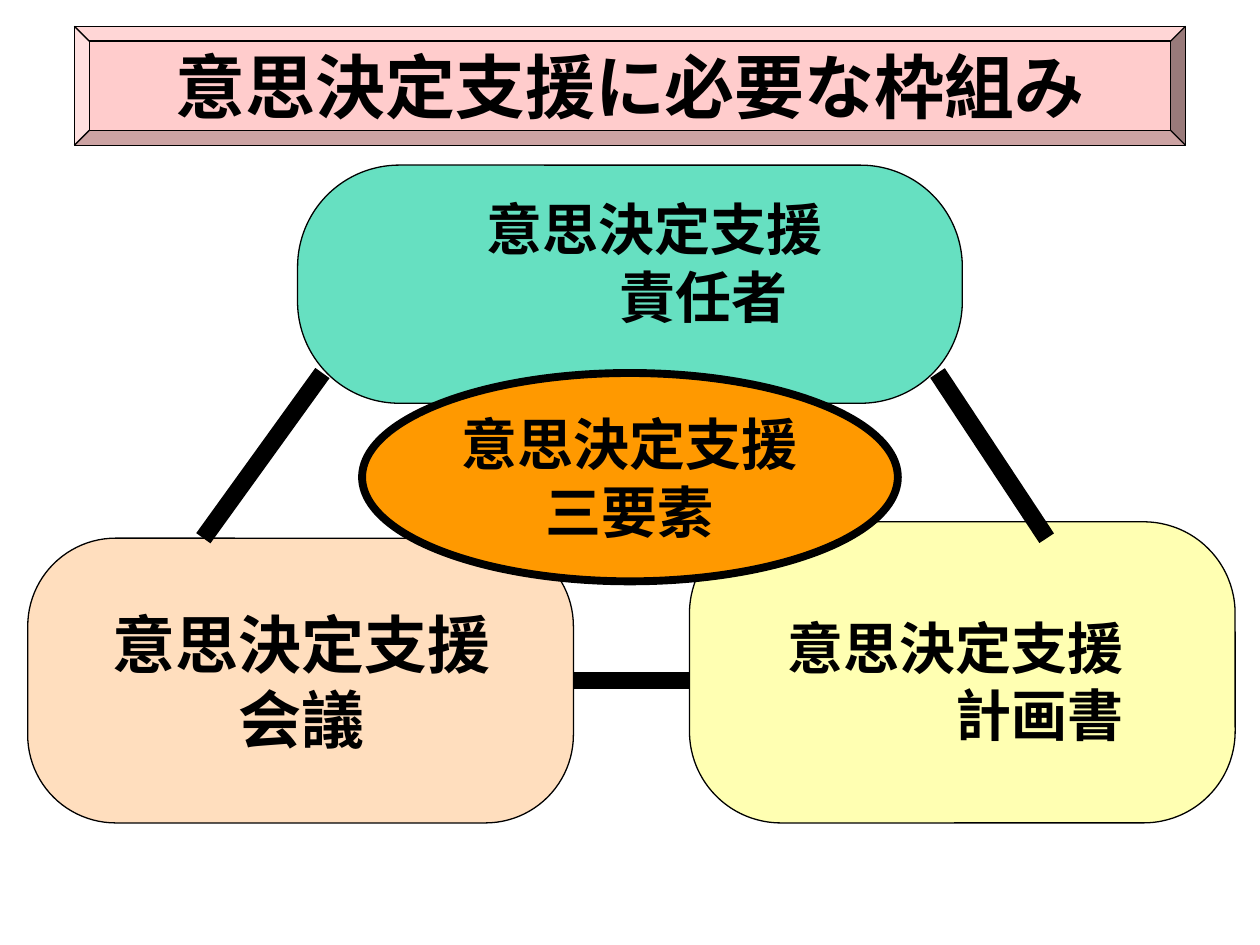
"""Build a slide showing the three elements of decision support."""
from dataclasses import dataclass

from lxml import etree
from pptx import Presentation
from pptx.dml.color import RGBColor
from pptx.enum.shapes import MSO_CONNECTOR, MSO_SHAPE
from pptx.enum.text import MSO_ANCHOR, MSO_AUTO_SIZE, PP_ALIGN
from pptx.oxml.ns import qn
from pptx.util import Cm, Pt

ROUND, OVAL, BEVEL = MSO_SHAPE.ROUNDED_RECTANGLE, MSO_SHAPE.OVAL, MSO_SHAPE.BEVEL
STRAIGHT = MSO_CONNECTOR.STRAIGHT
MIDDLE, TOP = MSO_ANCHOR.MIDDLE, MSO_ANCHOR.TOP
LEFT, CENTER = PP_ALIGN.LEFT, PP_ALIGN.CENTER
NO_FIT = MSO_AUTO_SIZE.NONE
RIGHT_SIDE = 3


@dataclass(frozen=True)
class Theme:
    ink: str = "000000"
    green: str = "00CC99"
    yellow: str = "FFFF99"
    peach: str = "FFCC99"
    orange: str = "FF9900"
    pink: str = "FFCCCC"
    serif: str = "Times New Roman"
    sans: str = "Arial"
    title: int = 40
    large: int = 36
    body: int = 32
    thin: float = 0.75
    rim: float = 4.5
    bar: float = 10


def write(sp, text, size, font, color, align=CENTER, anchor=MIDDLE, indents=(), bottom=0.13):
    tf = sp.text_frame
    tf.word_wrap = True
    tf.auto_size = NO_FIT
    tf.vertical_anchor = anchor
    tf.margin_left = tf.margin_right = Cm(0.25)
    tf.margin_top, tf.margin_bottom = Cm(0.13), Cm(bottom)
    for i, line in enumerate(text.split("\n")):
        p = tf.paragraphs[0] if i == 0 else tf.add_paragraph()
        p.alignment = align
        if indents:
            pPr = p._p.get_or_add_pPr()
            pPr.set("marL", str(Cm(indents[i])))
            pPr.set("indent", "0")
        r = p.add_run()
        r.text = line
        r.font.size, r.font.name, r.font.bold = Pt(size), font, True
        r.font.color.rgb = RGBColor.from_string(color)


class Deck:
    def __init__(self, theme):
        self.t = theme
        self.prs = Presentation()
        self.prs.slide_width, self.prs.slide_height = Cm(25.4), Cm(19.05)
        self.s = self.prs.slides.add_slide(self.prs.slide_layouts[5])

    def shape(self, kind, box, fill, line, adj=None, opacity=100):
        sp = self.s.shapes.add_shape(kind, *map(Cm, box))
        sp.shadow.inherit = False
        sp.fill.solid()
        sp.fill.fore_color.rgb = RGBColor.from_string(fill)
        if opacity < 100:
            color = sp.element.spPr.find(".//" + qn("a:srgbClr"))
            etree.SubElement(color, qn("a:alpha"), val=str(opacity * 1000))
        sp.line.color.rgb = RGBColor.from_string(self.t.ink)
        sp.line.width = Pt(line)
        if adj is not None:
            sp.adjustments[0] = adj
        return sp

    def bar(self, start, end, end_shape=None):
        c = self.s.shapes.add_connector(STRAIGHT, *map(Cm, start + end))
        c.line.color.rgb = RGBColor.from_string(self.t.ink)
        c.line.width = Pt(self.t.bar)
        etree.SubElement(c.element.spPr, qn("a:effectLst"))
        if end_shape is not None:
            c.end_connect(end_shape, RIGHT_SIDE)

    def label(self, box, text, size, **fmt):
        sp = self.s.shapes.add_textbox(*map(Cm, box))
        write(sp, text, size, self.t.serif, self.t.ink, anchor=TOP, **fmt)

    def title(self, box, text):
        self.shape(BEVEL, box, self.t.pink, self.t.thin, 0.125)
        sp = self.s.shapes.title
        sp.left, sp.top, sp.width, sp.height = map(Cm, box)
        write(sp, text, self.t.title, self.t.serif, self.t.ink)
        self.s.shapes.element.append(sp.element)


def main():
    t = Theme()
    deck = Deck(t)
    leader = deck.shape(ROUND, (6, 3.33, 13.4, 4.8), t.green, t.thin, 0.427, 60)
    write(leader, "意思決定支援\n責任者", t.body, t.serif, t.ink,
          align=LEFT, indents=(2.95, 5.63), bottom=1.02)
    deck.shape(ROUND, (13.9, 10.52, 11, 6.07), t.yellow, t.thin, 0.304, 75)
    meeting = deck.shape(ROUND, (0.56, 10.85, 11, 5.74), t.peach, t.thin, 0.309, 63)

    deck.bar((6.5, 7.52), (4.1, 10.85))
    deck.bar((18.9, 7.52), (21.1, 10.85))
    deck.bar((13.9, 13.72), (11.56, 13.72), meeting)

    core = deck.shape(OVAL, (7.3, 7.52, 10.8, 4.2), t.orange, t.rim)
    write(core, "意思決定支援\n三要素", t.body, t.sans, t.ink)
    deck.title((1.5, 0.53, 22.4, 2.4), "意思決定支援に必要な枠組み")
    deck.label((1.73, 12.07, 8.69, 3.33), "意思決定支援会議", t.large)
    deck.label((15.62, 12.24, 7.6, 3), "意思決定支援\n計画書", t.body,
               align=LEFT, indents=(0, 3.39))
    deck.prs.save("out.pptx")


if __name__ == "__main__":
    main()
